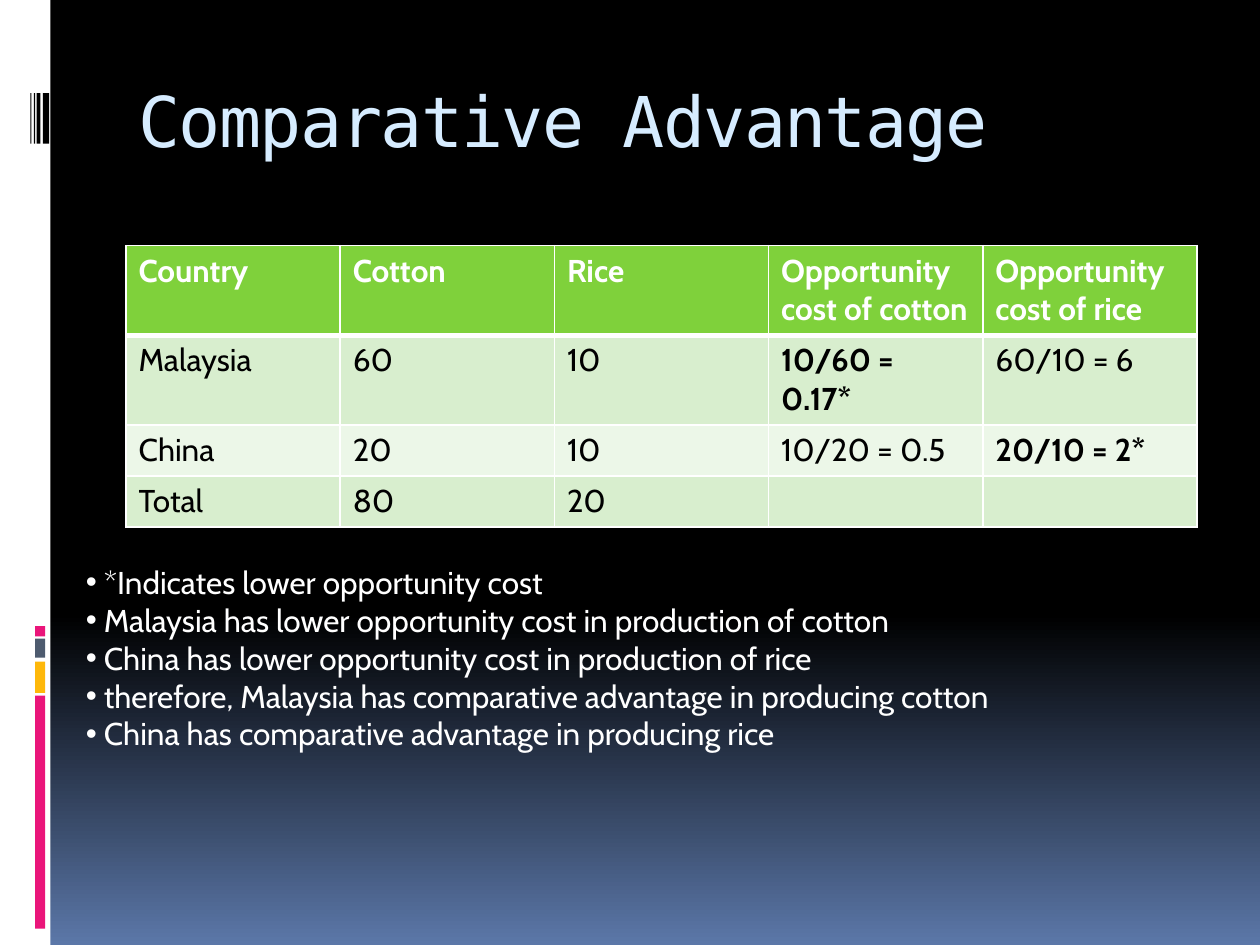
import copy

import pptx
import pptx.dml.color
import pptx.enum.shapes
import pptx.enum.text
import pptx.oxml.ns
import pptx.util
from lxml import etree

Pt = pptx.util.Pt
qn = pptx.oxml.ns.qn

COLORS = {
    "white": "FFFFFF", "black": "000000", "sky": "5B77A8", "title": "D6ECFF",
    "pink": "EA157A", "amber": "FEB80A", "slate": "4E5B6F",
    "header": "7FD13B", "band": "D8EECE", "light": "ECF7E8",
}
ROWS = [
    ["Country", "Cotton", "Rice", "Opportunity cost of cotton", "Opportunity cost of rice"],
    ["Malaysia", "60", "10", "10/60 = 0.17*", "60/10 = 6"],
    ["China", "20", "10", "10/20 = 0.5", "20/10 = 2*"],
    ["Total", "80", "20", "", ""],
]
NOTES = [
    "*Indicates lower opportunity cost",
    "Malaysia has lower opportunity cost in production of cotton",
    "China has lower opportunity cost in production of rice",
    "therefore, Malaysia has comparative advantage in producing cotton",
    "China has comparative advantage in producing rice",
]


def rgb(name):
    """Return the named colour."""
    return pptx.dml.color.RGBColor.from_string(COLORS[name])


def set_font(p, size, color, name="Cabin", bold=False):
    """Format a whole paragraph."""
    f = p.font
    f.size, f.name, f.bold = Pt(size), name, bold
    f.color.rgb = rgb(color)


def place(sp, box):
    """Move a shape to a box given in points."""
    sp.left, sp.top, sp.width, sp.height = map(Pt, box)


def add_background(s):
    """Fill the background, black fading to blue at the bottom."""
    fill = s.background.fill
    fill.gradient()
    fill.gradient_angle = 270
    gs = fill.gradient_stops[0]._gs
    gs.addnext(copy.deepcopy(gs))
    for stop, (pos, color) in zip(fill.gradient_stops, [(0, "black"), (0.65, "black"), (1, "sky")]):
        stop.position = pos
        stop.color.rgb = rgb(color)


def add_bar(s, box, color):
    """Add a plain rectangle."""
    sp = s.shapes.add_shape(pptx.enum.shapes.MSO_SHAPE.RECTANGLE, *map(Pt, box))
    sp.shadow.inherit = False
    sp.fill.solid()
    sp.fill.fore_color.rgb = rgb(color)
    sp.line.fill.background()


def add_sidebar(s, box):
    """Draw the white strip with its coloured blocks and stripes."""
    x, y, w, h = box
    add_bar(s, box, "white")
    for top, height, color in [(397.5, 133.2, "pink"), (378, 18, "amber"),
                               (365, 10.8, "slate"), (357.8, 5.8, "pink")]:
        add_bar(s, (x + 20, y + top, 5.8, height), color)
    for left, width in [(24.5, 3.6), (20.9, 2.2), (19.4, 0.72), (17.3, 0.72)]:
        add_bar(s, (x + left, y + 53.3, width, 28.8), "black")


def add_title(s, box):
    """Fill and place the title."""
    sp = s.shapes.title
    place(sp, box)
    tf = sp.text_frame
    tf.text = "Comparative Advantage"
    tf.vertical_anchor = pptx.enum.text.MSO_ANCHOR.TOP
    tf.auto_size = pptx.enum.text.MSO_AUTO_SIZE.NONE
    p = tf.paragraphs[0]
    p.alignment = pptx.enum.text.PP_ALIGN.LEFT
    set_font(p, 40, "title", "DejaVu Sans Mono")
    p.runs[0].font._element.set("spc", "-100")


def set_borders(cell, bottom):
    """Give a cell white borders, with its own bottom width."""
    pr = cell._tc.get_or_add_tcPr()
    for i, (side, width) in enumerate([("L", 1), ("R", 1), ("T", 1), ("B", bottom)]):
        ln = etree.Element(qn(f"a:ln{side}"), w=str(Pt(width)))
        solid = etree.SubElement(ln, qn("a:solidFill"))
        etree.SubElement(solid, qn("a:srgbClr"), val=COLORS["white"])
        pr.insert(i, ln)


def add_table(s, box):
    """Add the opportunity cost table, a tall header over equal rows."""
    x, y, w, h = box
    header = 51
    table = s.shapes.add_table(len(ROWS), len(ROWS[0]), *map(Pt, box)).table
    table.horz_banding = False
    for col in table.columns:
        col.width = Pt(w / len(ROWS[0]))
    for i, texts in enumerate(ROWS):
        table.rows[i].height = Pt(header if i == 0 else (h - header) / (len(ROWS) - 1))
        for j, text in enumerate(texts):
            cell = table.cell(i, j)
            cell.text = text
            cell.fill.solid()
            cell.fill.fore_color.rgb = rgb("header" if i == 0 else "band" if i % 2 else "light")
            set_borders(cell, 3 if i == 0 else 1)
            set_font(cell.text_frame.paragraphs[0], 18, "black" if i else "white",
                     bold=i == 0 or text.endswith("*"))


def add_notes_list(s, box):
    """Fill and place the bulleted list."""
    sp = s.placeholders[1]
    place(sp, box)
    tf = sp.text_frame
    tf.text = "\n".join(NOTES)
    tf.auto_size = pptx.enum.text.MSO_AUTO_SIZE.NONE
    for p in tf.paragraphs:
        p.space_before = Pt(0)
        set_font(p, 18, "white")
        pr = p._p.get_or_add_pPr()
        pr.set("marL", str(Pt(10.3)))
        pr.set("indent", str(-Pt(10.3)))
        bullet = etree.Element(qn("a:buChar"), char="•")
        pr.find(qn("a:defRPr")).addprevious(bullet)


def main():
    """Build and save the slide."""
    prs = pptx.Presentation()
    prs.slide_width, prs.slide_height = Pt(720), Pt(540)
    s = prs.slides.add_slide(prs.slide_layouts[1])
    add_background(s)
    add_sidebar(s, (0, 0, 28.8, 540))
    add_title(s, (72, 40.5, 612, 72))
    add_table(s, (72, 140.4, 612, 138.6))
    add_notes_list(s, (41.8, 318.2, 635.8, 138.2))
    prs.save("out.pptx")


if __name__ == "__main__":
    main()
